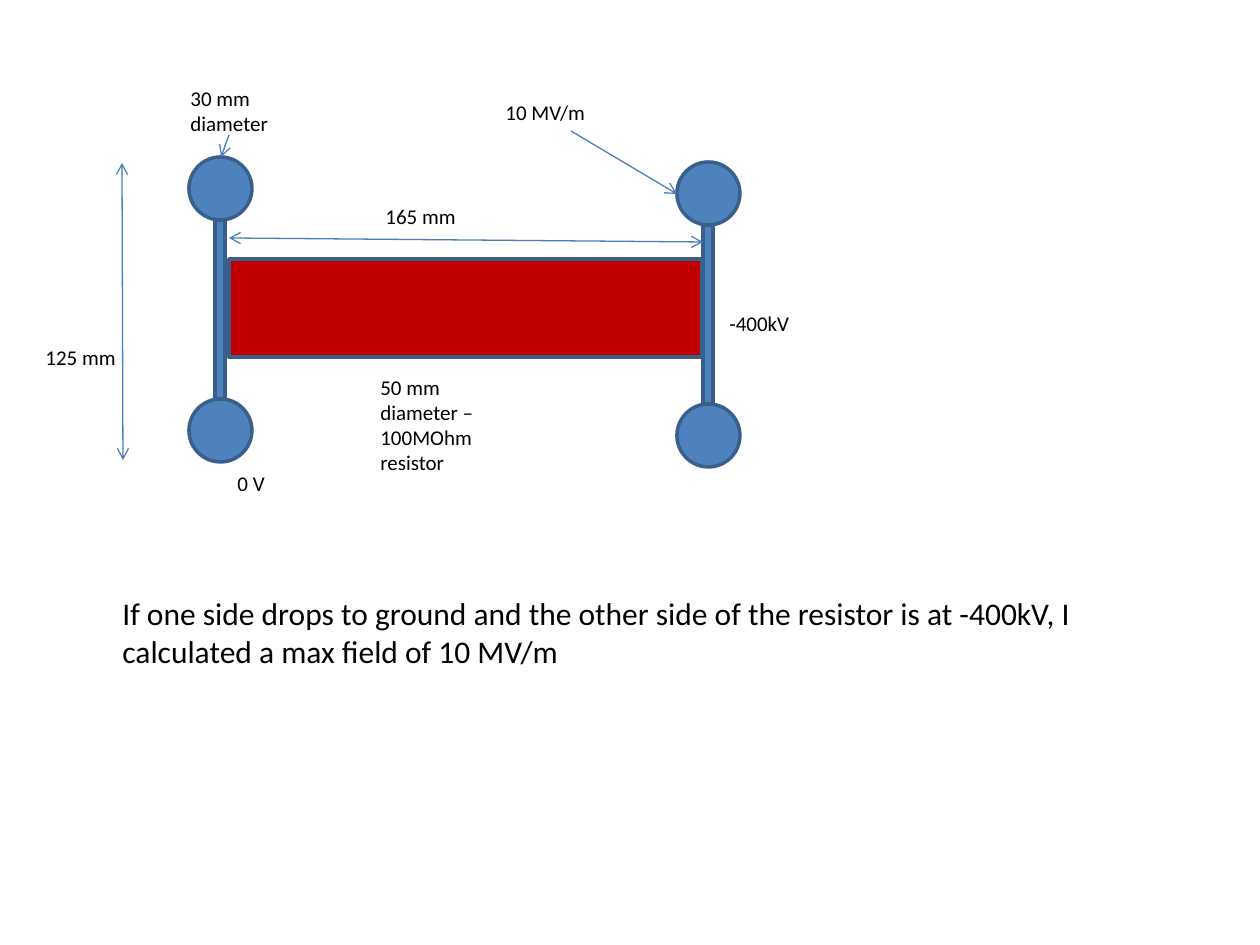
"""Build a slide of a resistor between two ring electrodes with its dimensions and peak field."""
from lxml.etree import SubElement
from pptx import Presentation
from pptx.dml.color import RGBColor
from pptx.enum.shapes import MSO_CONNECTOR as Connector, MSO_SHAPE as Shape
from pptx.enum.text import MSO_AUTO_SIZE as AutoSize
from pptx.oxml.ns import qn
from pptx.util import Inches, Pt

PX = Inches(1) / 126
ELECTRODE_BLUE = RGBColor(0x4F, 0x81, 0xBD)
OUTLINE_BLUE = RGBColor(0x3A, 0x5F, 0x8C)
ARROW_BLUE = RGBColor(0x4B, 0x7E, 0xBC)
RESISTOR_RED = RGBColor(0xC0, 0x00, 0x00)
BLACK = RGBColor(0x00, 0x00, 0x00)


def emu(*lengths):
    return [round(length * PX) for length in lengths]


def add_part(preset, box, color):
    part = slide.shapes.add_shape(preset, *emu(*box))
    part.shadow.inherit = False
    part.fill.solid()
    part.fill.fore_color.rgb = color
    part.line.color.rgb = OUTLINE_BLUE
    part.line.width = Pt(2)


prs = Presentation()
prs.slide_width, prs.slide_height = emu(1260, 945)
slide = prs.slides.add_slide(prs.slide_layouts[6])

add_part(Shape.RECTANGLE, (229, 259, 473, 98), RESISTOR_RED)

ball, rod_width, rod_height = 63, 10, 179
for left, top in [(189, 157), (677, 162)]:
    for ball_top in (top, top + ball + rod_height):
        add_part(Shape.OVAL, (left, ball_top, ball, ball), ELECTRODE_BLUE)
    rod_left = left + (ball - rod_width) // 2
    add_part(Shape.RECTANGLE, (rod_left, top + ball, rod_width, rod_height), ELECTRODE_BLUE)

arrows = [
    ((229, 135, 221, 157), ["tailEnd"]),
    ((122, 163, 123, 460), ["headEnd", "tailEnd"]),
    ((229, 238, 703, 242), ["headEnd", "tailEnd"]),
    ((571, 131, 677, 194), ["tailEnd"]),
]
for ends, heads in arrows:
    arrow = slide.shapes.add_connector(Connector.STRAIGHT, *emu(*ends))
    arrow.line.color.rgb = ARROW_BLUE
    arrow.line.width = Pt(0.75)
    outline = arrow.line._get_or_add_ln()
    for head in heads:
        SubElement(outline, qn(f"a:{head}"), type="arrow")
    SubElement(arrow._element.spPr, qn("a:effectLst"))

labels = [
    ("30 mm diameter", (178, 79, 158, 63), 12),
    ("125 mm", (33, 338, 158, 38), 12),
    ("50 mm diameter – 100MOhm resistor", (368, 368, 158, 115), 12),
    ("165 mm", (373, 197, 158, 38), 12),
    ("10 MV/m", (493, 93, 158, 38), 12),
    ("-400kV", (717, 304, 158, 38), 12),
    ("0 V", (225, 464, 158, 38), 12),
    ("If one side drops to ground and the other side of the resistor is at -400kV, "
     "I calculated a max field of 10 MV/m", (110, 588, 974, 89), 18),
]
for wording, box, size in labels:
    frame = slide.shapes.add_textbox(*emu(*box)).text_frame
    frame.word_wrap = True
    frame.auto_size = AutoSize.SHAPE_TO_FIT_TEXT
    frame.text = wording
    font = frame.paragraphs[0].runs[0].font
    font.name = "Calibri"
    font.size = Pt(size)
    font.color.rgb = BLACK

prs.save("out.pptx")
